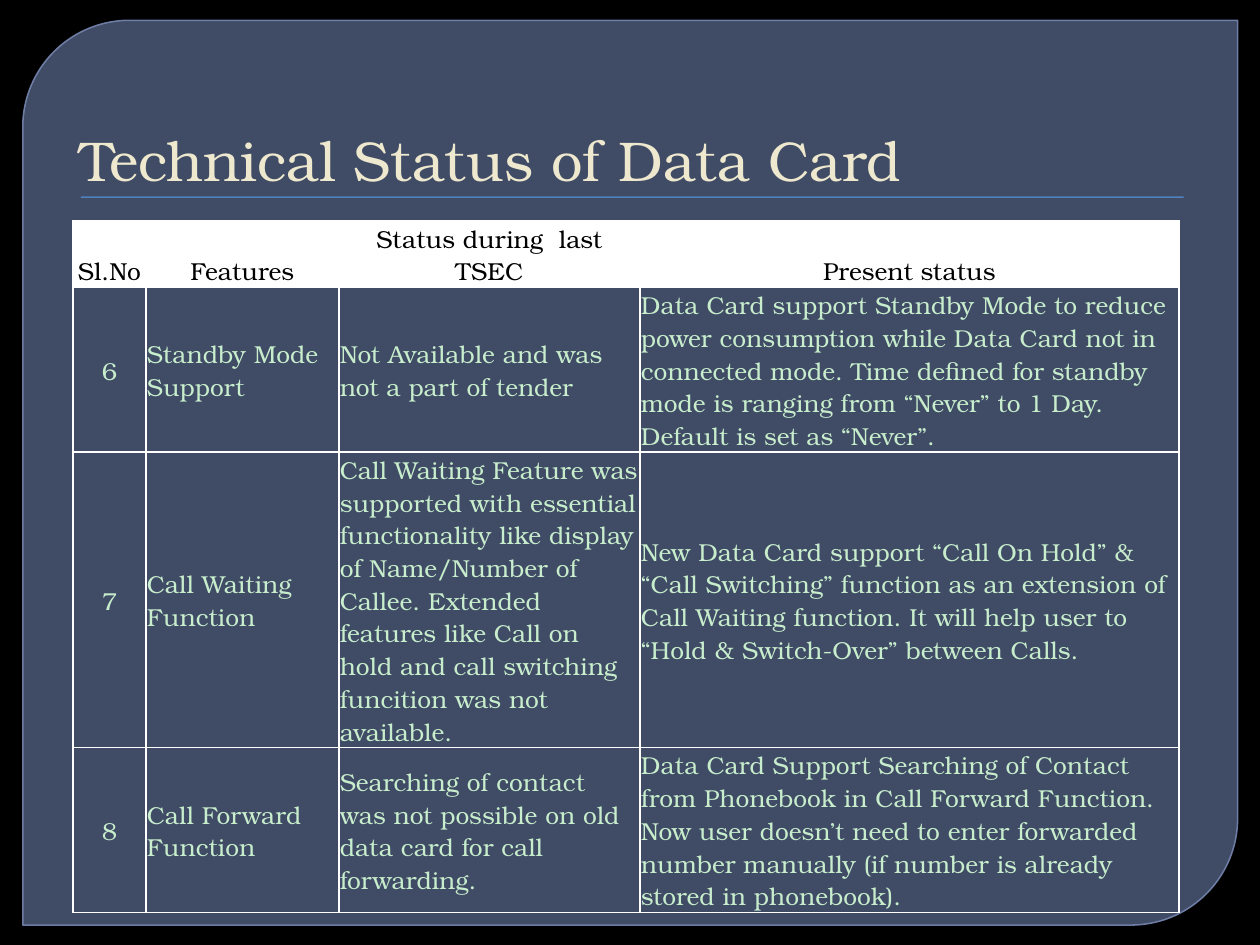
from dataclasses import dataclass

from pptx import Presentation
from pptx import util as u
from pptx.dml.color import RGBColor
from pptx.enum import shapes, text
from pptx.oxml import parse_xml
from pptx.oxml.ns import nsdecls, qn


@dataclass(frozen=True)
class Theme:
    font: str = "TeX Gyre Bonum"
    title_size: int = 32
    table_size: int = 14
    background: str = "000000"
    card: str = "63759D"
    card_line: str = "7989B3"
    rule: str = "4F81BD"
    title: str = "EDE8CE"
    header_fill: str = "FFFFFF"
    header_text: str = "000000"
    body_text: str = "C7EDCC"
    border: str = "FFFFFF"


HEADERS = ["Sl.No", "Features", "Status during  last TSEC", "Present status"]
FEATURES = [
    ["6", "Standby Mode Support", "Not Available and was not a part of tender",
     "Data Card support Standby Mode to reduce power consumption while Data Card "
     "not in connected mode. Time defined for standby mode is ranging from “Never” "
     "to 1 Day. Default is set as “Never”."],
    ["7", "Call Waiting Function",
     "Call Waiting Feature was supported with essential functionality like display "
     "of Name/Number of Callee. Extended features like Call on hold and call "
     "switching funcition was not available.",
     "New Data Card support “Call On Hold” & “Call Switching” function as an "
     "extension of Call Waiting function. It will help user to “Hold & Switch-Over” "
     "between Calls."],
    ["8", "Call Forward Function",
     "Searching of contact was not possible on old data card for call forwarding.",
     "Data Card Support Searching of Contact from Phonebook in Call Forward "
     "Function. Now user doesn’t need to enter forwarded number manually (if number "
     "is already stored in phonebook)."],
]
COLUMN_WIDTHS = [1.47, 3.89, 6.07, 10.87]
ROW_HEIGHTS = [0.64, 2.84, 4.95, 2.84]


def apply(target, values):
    for name, value in values.items():
        setattr(target, name, value)


def color(code):
    return RGBColor.from_string(code)


def lengths(*values):
    return [u.Cm(value) for value in values]


def set_alpha(fill_parent, percent):
    """Make the solid fill inside an element partly transparent."""
    tone = fill_parent.find(qn("a:solidFill"))[0]
    tone.append(parse_xml(f'<a:alpha {nsdecls("a")} val="{percent * 1000}"/>'))


class SlideBuilder:
    def __init__(self, deck, theme):
        self.theme = theme
        self.page = deck.slides.add_slide(deck.slide_layouts[5])
        fill = self.page.background.fill
        fill.solid()
        fill.fore_color.rgb = color(theme.background)

    def backdrop(self, kind, place, fill, order):
        """Add a filled shape behind the title."""
        shape = self.page.shapes.add_shape(kind, *lengths(*place))
        shape.shadow.inherit = False
        shape.fill.solid()
        shape.fill.fore_color.rgb = color(fill)
        shape.line.fill.background()
        self.page.shapes.element.insert(2 + order, shape.element)
        return shape

    def card(self, place):
        shape = self.backdrop(shapes.MSO_SHAPE.ROUND_2_DIAG_RECTANGLE, place,
                              self.theme.card, 0)
        shape.adjustments[0], shape.adjustments[1] = 0.118, 0
        shape.line.color.rgb = color(self.theme.card_line)
        shape.line.width = u.Pt(0.87)
        properties = shape.element.spPr
        set_alpha(properties, 65)
        set_alpha(properties.find(qn("a:ln")), 88)

    def rule(self, place):
        self.backdrop(shapes.MSO_SHAPE.RECTANGLE, place, self.theme.rule, 1)

    def add_text(self, frame, wording, size, tone, align):
        para = frame.paragraphs[0]
        para.alignment = align
        span = para.add_run()
        span.text = wording
        apply(span.font, {"name": self.theme.font, "size": u.Pt(size), "bold": False})
        span.font.color.rgb = color(tone)
        return para

    def title(self, wording, place):
        box = self.page.shapes.title
        apply(box, dict(zip(("left", "top", "width", "height"), lengths(*place))))
        frame = box.text_frame
        apply(frame, {"word_wrap": True, "auto_size": text.MSO_AUTO_SIZE.NONE,
                      "vertical_anchor": text.MSO_ANCHOR.BOTTOM,
                      "margin_left": u.Cm(0.18), "margin_bottom": 0})
        para = self.add_text(frame, wording, self.theme.title_size, self.theme.title,
                             text.PP_ALIGN.LEFT)
        para._p.get_or_add_pPr().set("marL", str(u.Cm(0.15)))

    def table(self, rows, left, top):
        place = lengths(left, top, sum(COLUMN_WIDTHS), sum(ROW_HEIGHTS))
        table = self.page.shapes.add_table(len(rows), len(rows[0]), *place).table
        apply(table, {"first_row": False, "horz_banding": False})
        for column, width in zip(table.columns, COLUMN_WIDTHS):
            column.width = u.Cm(width)
        for row, height in zip(table.rows, ROW_HEIGHTS):
            row.height = u.Cm(height)
        for r, row in enumerate(rows):
            for c, wording in enumerate(row):
                self.cell(table.cell(r, c), wording, r == 0, c == 0)

    def cell(self, cell, wording, is_header, is_number):
        anchor = text.MSO_ANCHOR.BOTTOM if is_header else text.MSO_ANCHOR.MIDDLE
        apply(cell, {"vertical_anchor": anchor, "margin_left": u.Cm(0.02),
                     "margin_right": u.Cm(0.02), "margin_top": u.Cm(0.02),
                     "margin_bottom": 0})
        if is_header:
            cell.fill.solid()
            cell.fill.fore_color.rgb = color(self.theme.header_fill)
        else:
            cell.fill.background()
        centred = is_header or is_number
        self.add_text(cell.text_frame, wording, self.theme.table_size,
                      self.theme.header_text if is_header else self.theme.body_text,
                      text.PP_ALIGN.CENTER if centred else text.PP_ALIGN.LEFT)
        # Borders come before the fill in the cell properties
        for order, side in enumerate("LRTB"):
            cell._tc.get_or_add_tcPr().insert(order, parse_xml(
                f'<a:ln{side} {nsdecls("a")} w="{u.Pt(1)}"><a:solidFill>'
                f'<a:srgbClr val="{self.theme.border}"/></a:solidFill></a:ln{side}>'))


def main():
    deck = Presentation()
    deck.slide_width, deck.slide_height = lengths(25.4, 19.05)
    slide = SlideBuilder(deck, Theme())

    # Card and rule behind the content
    slide.card((0.46, 0.41, 24.49, 18.24))
    slide.rule((1.63, 3.96, 22.23, 0.03))

    # Title and feature table
    slide.title("Technical Status of Data Card", (1.27, 0.71, 22.86, 3.18))
    slide.table([HEADERS, *FEATURES], 1.47, 4.45)

    deck.save("out.pptx")


if __name__ == "__main__":
    main()
